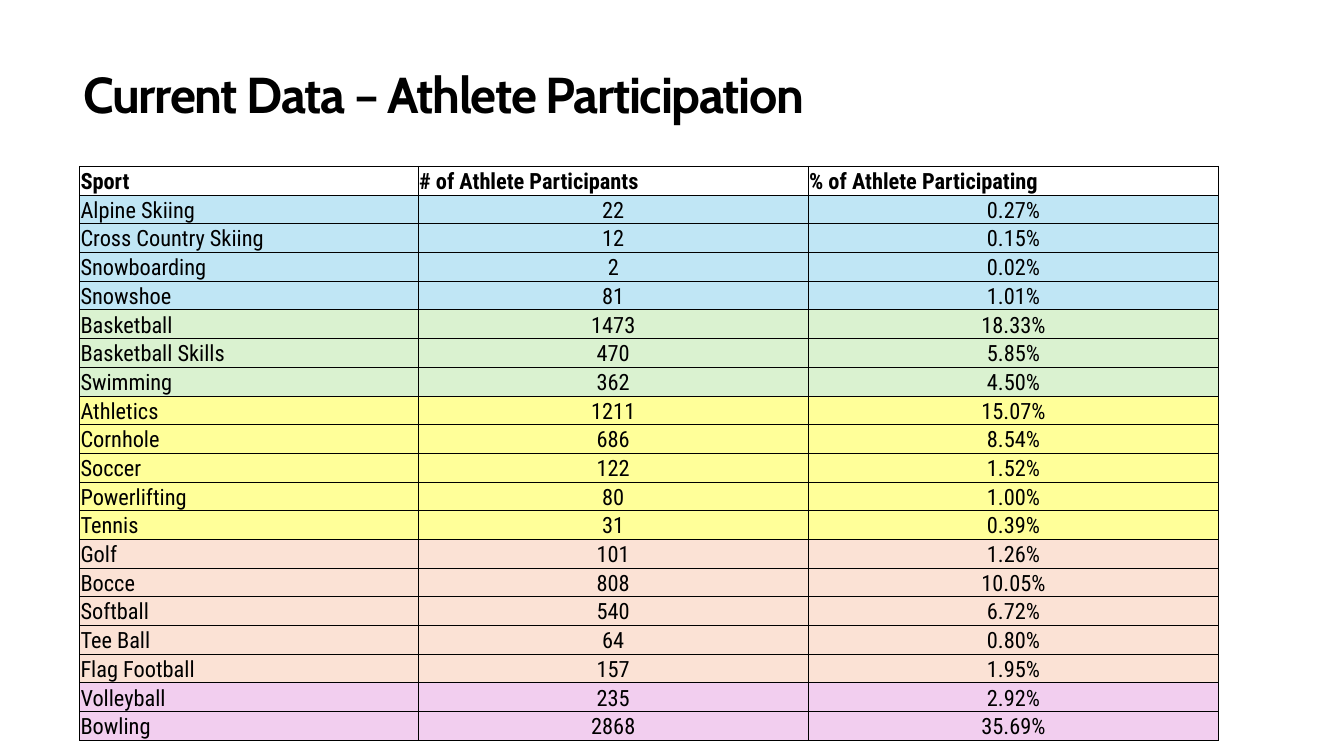
from dataclasses import dataclass
from typing import NamedTuple

from lxml.etree import SubElement
from pptx import Presentation
from pptx.dml.color import RGBColor
from pptx.enum.text import MSO_ANCHOR, MSO_AUTO_SIZE, PP_ALIGN
from pptx.oxml.ns import qn
from pptx.slide import Slide
from pptx.table import _Cell
from pptx.text.text import _Paragraph
from pptx.util import Cm, Pt


@dataclass(frozen=True)
class Theme:
    ink: str = "000000"
    blue: str = "C0E6F5"
    green: str = "DAF2D0"
    yellow: str = "FFFF99"
    peach: str = "FBE2D5"
    violet: str = "F2CEEF"
    title_font: str = "Cabin"
    table_font: str = "Roboto Condensed"
    title_size: Pt = Pt(36)
    table_size: Pt = Pt(16)
    border_width: Pt = Pt(0.5)


class Sport(NamedTuple):
    name: str
    participants: str
    share: str


class SportGroup(NamedTuple):
    color: str
    sports: list[Sport]


THEME = Theme()
HEADINGS = ("Sport", "# of Athlete Participants", "% of Athlete Participating")
COLUMN_WIDTHS = (Cm(8.53), Cm(9.83), Cm(10.34))
LEFT = Cm(2.01)

GROUPS = [
    SportGroup(THEME.blue, [
        Sport("Alpine Skiing", "22", "0.27%"),
        Sport("Cross Country Skiing", "12", "0.15%"),
        Sport("Snowboarding", "2", "0.02%"),
        Sport("Snowshoe", "81", "1.01%"),
    ]),
    SportGroup(THEME.green, [
        Sport("Basketball", "1473", "18.33%"),
        Sport("Basketball Skills", "470", "5.85%"),
        Sport("Swimming", "362", "4.50%"),
    ]),
    SportGroup(THEME.yellow, [
        Sport("Athletics", "1211", "15.07%"),
        Sport("Cornhole", "686", "8.54%"),
        Sport("Soccer", "122", "1.52%"),
        Sport("Powerlifting", "80", "1.00%"),
        Sport("Tennis", "31", "0.39%"),
    ]),
    SportGroup(THEME.peach, [
        Sport("Golf", "101", "1.26%"),
        Sport("Bocce", "808", "10.05%"),
        Sport("Softball", "540", "6.72%"),
        Sport("Tee Ball", "64", "0.80%"),
        Sport("Flag Football", "157", "1.95%"),
    ]),
    SportGroup(THEME.violet, [
        Sport("Volleyball", "235", "2.92%"),
        Sport("Bowling", "2868", "35.69%"),
    ]),
]


def format_runs(paragraph: _Paragraph, font_name: str, size: Pt, bold: bool) -> None:
    for run in paragraph.runs:
        run.font.name = font_name
        run.font.size = size
        run.font.bold = bold
        run.font.color.rgb = RGBColor.from_string(THEME.ink)


def add_title(slide: Slide, text: str) -> None:
    title = slide.shapes.title
    title.left, title.top, title.width, title.height = LEFT, Cm(1.02), Cm(26.11), Cm(2.9)
    frame = title.text_frame
    frame.text = text
    frame.word_wrap = True
    frame.auto_size = MSO_AUTO_SIZE.NONE
    frame.vertical_anchor = MSO_ANCHOR.MIDDLE
    frame.margin_left = frame.margin_right = frame.margin_top = frame.margin_bottom = Cm(0.1)
    heading = frame.paragraphs[0]
    heading.alignment = PP_ALIGN.LEFT
    heading.line_spacing = THEME.title_size
    format_runs(heading, THEME.title_font, THEME.title_size, bold=True)
    heading.runs[0]._r.get_or_add_rPr().set("spc", "-100")


def add_borders(cell: _Cell) -> None:
    """Line all four edges; borders must come before the fill in the XML."""
    properties = cell._tc.get_or_add_tcPr()
    for position, edge in enumerate(("a:lnL", "a:lnR", "a:lnT", "a:lnB")):
        line = SubElement(properties, qn(edge), w=str(THEME.border_width))
        SubElement(SubElement(line, qn("a:solidFill")), qn("a:srgbClr"), val=THEME.ink)
        properties.insert(position, line)


def fill_cell(cell: _Cell, text: str, color: str | None, centered: bool) -> None:
    """Write one cell; a cell without a colour is a bold heading."""
    cell.text_frame.text = text
    cell.vertical_anchor = MSO_ANCHOR.BOTTOM
    cell.margin_left = cell.margin_right = cell.margin_top = Cm(0.02)
    cell.margin_bottom = Cm(0)
    entry = cell.text_frame.paragraphs[0]
    entry.alignment = PP_ALIGN.CENTER if centered else PP_ALIGN.LEFT
    format_runs(entry, THEME.table_font, THEME.table_size, bold=color is None)
    if color is None:
        cell.fill.background()
    else:
        cell.fill.solid()
        cell.fill.fore_color.rgb = RGBColor.from_string(color)
    add_borders(cell)


def add_participation_table(slide: Slide) -> None:
    rows = [(None, HEADINGS)]
    rows += [(group.color, sport) for group in GROUPS for sport in group.sports]
    table = slide.shapes.add_table(
        len(rows), len(HEADINGS), LEFT, Cm(4.19), sum(COLUMN_WIDTHS), Cm(14.47)
    ).table
    table.first_row = table.horz_banding = False
    for column, width in zip(table.columns, COLUMN_WIDTHS):
        column.width = width
    for row_index, (color, values) in enumerate(rows):
        for column_index, value in enumerate(values):
            centered = color is not None and column_index > 0
            fill_cell(table.cell(row_index, column_index), value, color, centered)


def main() -> None:
    presentation = Presentation()
    presentation.slide_width, presentation.slide_height = Cm(33.87), Cm(19.05)
    title_only = presentation.slide_layouts[5]
    slide = presentation.slides.add_slide(title_only)
    add_title(slide, "Current Data – Athlete Participation")
    add_participation_table(slide)
    presentation.save("out.pptx")


if __name__ == "__main__":
    main()
